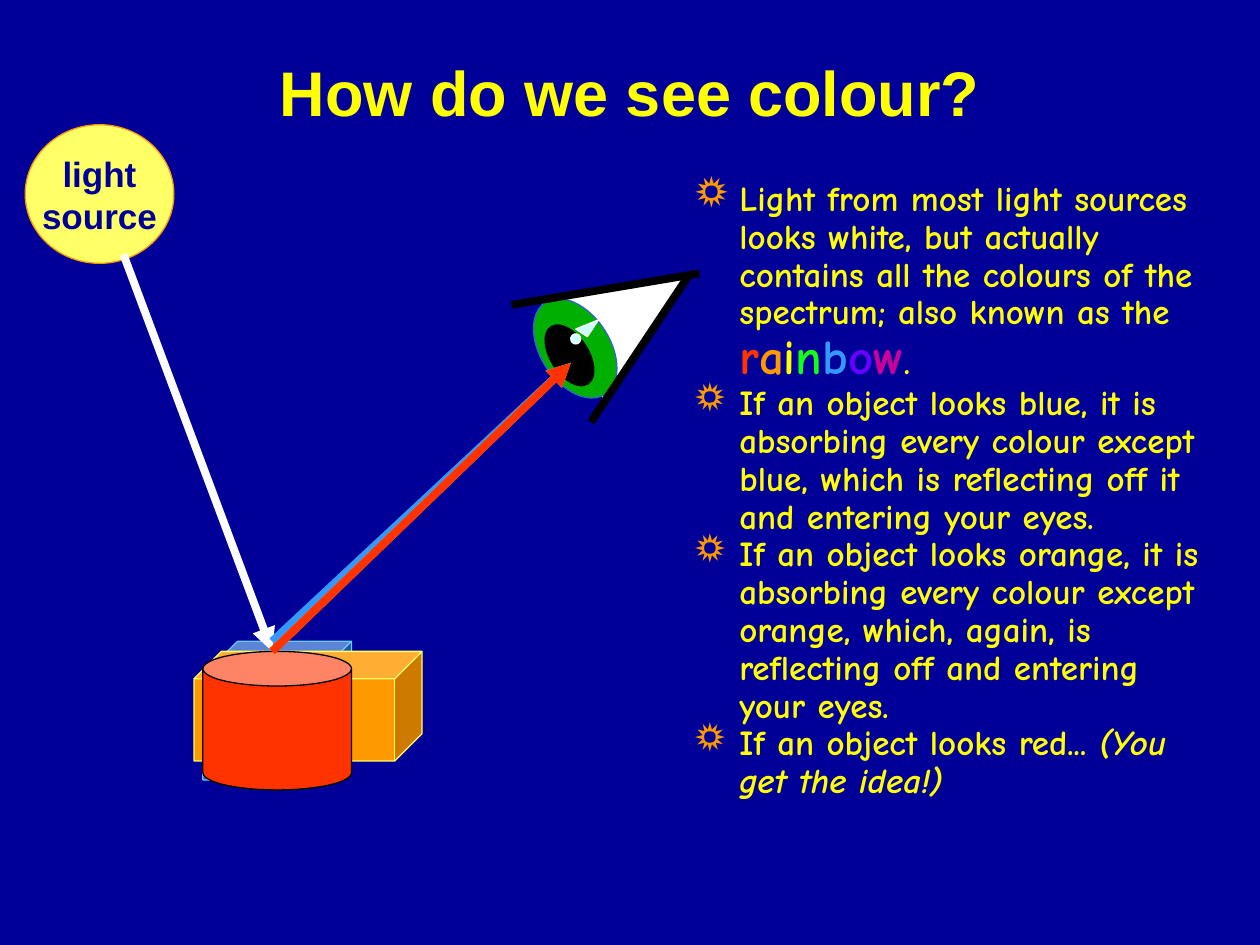
from dataclasses import dataclass

from lxml import etree
from pptx import Presentation
from pptx.dml.color import RGBColor
from pptx.enum.shapes import MSO_CONNECTOR, MSO_SHAPE
from pptx.enum.text import MSO_ANCHOR, PP_ALIGN
from pptx.oxml.ns import qn
from pptx.util import Inches, Pt

OVAL, CUBE, CAN = MSO_SHAPE.OVAL, MSO_SHAPE.CUBE, MSO_SHAPE.CAN
CONE, GLINT = MSO_SHAPE.ISOSCELES_TRIANGLE, MSO_SHAPE.RIGHT_TRIANGLE
STRAIGHT = MSO_CONNECTOR.STRAIGHT
CENTER, LEFT = PP_ALIGN.CENTER, PP_ALIGN.LEFT
MIDDLE, TOP = MSO_ANCHOR.MIDDLE, MSO_ANCHOR.TOP


@dataclass(frozen=True)
class Theme:
    head: str = "Arial"
    body: str = "Comic Neue"
    title: int = 36
    big: int = 28
    text: int = 20
    thin: float = 0.75
    thick: float = 4.5
    navy: str = "000099"
    yellow: str = "FFFF00"
    lemon: str = "FFFF66"
    orange: str = "FF9900"
    red: str = "FF3300"
    lime: str = "13FF13"
    green: str = "00B000"
    sky: str = "3399FF"
    blue: str = "3366CC"
    aqua: str = "66CCFF"
    ice: str = "CCFFFF"
    violet: str = "6600FF"
    pink: str = "CC0099"
    white: str = "FFFFFF"
    black: str = "000000"


T = Theme()


def rgb(code):
    return RGBColor.from_string(code)


def write(par, text, font=T.body, size=T.text, color=T.yellow, bold=True, italic=False):
    run = par.add_run()
    run.text = text
    face = run.font
    face.name, face.size = font, Pt(size)
    face.bold, face.italic = bold, italic
    face.color.rgb = rgb(color)


def frame(shape, anchor=TOP, wrap=True):
    area = shape.text_frame
    area.word_wrap = wrap
    area.vertical_anchor = anchor
    return area


def lines(area, count, align=LEFT):
    """Return the given number of aligned paragraphs."""
    pars = [area.paragraphs[0]] + [area.add_paragraph() for _ in range(count - 1)]
    for par in pars:
        par.alignment = align
    return pars


def draw(slide, kind, box, fill, line, turn=0):
    shape = slide.shapes.add_shape(kind, *map(Inches, box))
    shape.shadow.inherit = False
    shape.fill.solid()
    shape.fill.fore_color.rgb = rgb(fill)
    shape.line.color.rgb = rgb(line)
    shape.line.width = Pt(T.thin)
    shape.rotation = turn
    return shape


def stroke(slide, start, end, color, arrow=False):
    line = slide.shapes.add_connector(STRAIGHT, *map(Inches, (*start, *end)))
    line.line.color.rgb = rgb(color)
    line.line.width = Pt(T.thick)
    if arrow:
        etree.SubElement(line.line._get_or_add_ln(), qn("a:tailEnd"), type="triangle")
    etree.SubElement(line._element.spPr, qn("a:effectLst"))


def bullet(par, size):
    """Give the paragraph a hanging sun of the given size in percent."""
    props = par._p.get_or_add_pPr()
    props.set("marL", str(Inches(0.38)))
    props.set("indent", str(-Inches(0.38)))
    hue = etree.SubElement(props, qn("a:buClr"))
    etree.SubElement(hue, qn("a:srgbClr"), val=T.orange)
    etree.SubElement(props, qn("a:buSzPct"), val=str(size * 1000))
    etree.SubElement(props, qn("a:buChar"), char="☼")
    par.line_spacing = 0.9


def heading(slide, box):
    area = frame(slide.shapes.add_textbox(*map(Inches, box)), MIDDLE)
    par, = lines(area, 1, CENTER)
    write(par, "How do we see colour?", font=T.head, size=T.title)


def lamp(slide, box):
    area = frame(draw(slide, OVAL, box, T.lemon, T.orange), MIDDLE, wrap=False)
    words = ("light", "source")
    for par, word in zip(lines(area, len(words), CENTER), words):
        write(par, word, font=T.head, color=T.navy)


def eye(slide, box):
    left, top = box[:2]

    def part(kind, x, y, wide, high, fill, line, turn):
        draw(slide, kind, (left + x, top + y, wide, high), fill, line, turn)

    part(CONE, 0.47, 0, 0.94, 1.11, T.white, T.black, 56.9)
    part(OVAL, 0.23, 0.4, 0.55, 0.87, T.green, T.blue, 326.9)
    part(OVAL, 0.31, 0.62, 0.3, 0.54, T.black, T.black, 327.1)
    part(GLINT, 0.52, 0.59, 0.16, 0.11, T.ice, T.white, 303.4)
    for (x1, y1), (x2, y2) in (((1.49, 0.24), (0, 0.49)),
                               ((1.41, 0.25), (0.63, 1.42))):
        stroke(slide, (left + x1, top + y1), (left + x2, top + y2), T.black)
    part(OVAL, 0.47, 0.72, 0.08, 0.08, T.ice, T.white, 340.8)


def objects(slide, box, source, pupil):
    """Stack three solids, each with the ray it sends to the pupil."""
    left, top = box[:2]
    spot = (left + 0.62, top + 0.08)
    draw(slide, CUBE, (left + 0.07, top, 1.18, 1.1), T.blue, T.aqua)
    stroke(slide, source, spot, T.white, arrow=True)
    stroke(slide, (spot[0], top), pupil, T.sky, arrow=True)
    for kind, x, wide, high, fill, line in (
            (CUBE, 0, 1.81, 0.87, T.orange, T.lemon),
            (CAN, 0.07, 1.18, 1.1, T.red, T.black)):
        draw(slide, kind, (left + x, spot[1], wide, high), fill, line)
        stroke(slide, spot, pupil, fill, arrow=True)


def notes(slide, box):
    area = frame(slide.shapes.add_textbox(*map(Inches, box)))
    first, blue, orange, red = pars = lines(area, 4)
    for par in pars:
        bullet(par, 130 if par is first else 120)
    write(first, "Light from most light sources looks white, but actually contains "
                 "all the colours of the spectrum; also known as the ")
    hues = (T.red, T.orange, T.yellow, T.lime, T.sky, T.violet, T.pink)
    for letter, hue in zip("rainbow", hues):
        write(first, letter, size=T.big, color=hue)
    write(first, ".")
    write(blue, "If an object looks blue, it is absorbing every colour except blue, "
                "which is reflecting off it and entering your eyes.")
    write(orange, "If an object looks orange, it is absorbing every colour except "
                  "orange, which, again, is reflecting off and entering your eyes.")
    write(red, "If an object looks red... ")
    write(red, "(You get the idea!)", italic=True)


def main():
    deck = Presentation()
    deck.slide_width, deck.slide_height = Inches(10), Inches(7.5)
    slide = deck.slides.add_slide(deck.slide_layouts[6])
    slide.background.fill.solid()
    slide.background.fill.fore_color.rgb = rgb(T.navy)
    heading(slide, (0.5, 0.3, 9, 0.85))
    lamp(slide, (0.2, 0.99, 1.18, 1.1))
    eye(slide, (4.06, 1.93, 1.49, 1.42))
    objects(slide, (1.54, 5.09, 1.81, 1.18), source=(0.98, 2.02), pupil=(4.53, 2.88))
    notes(slide, (5.39, 1.39, 4.33, 5.83))
    deck.save("out.pptx")


if __name__ == "__main__":
    main()
